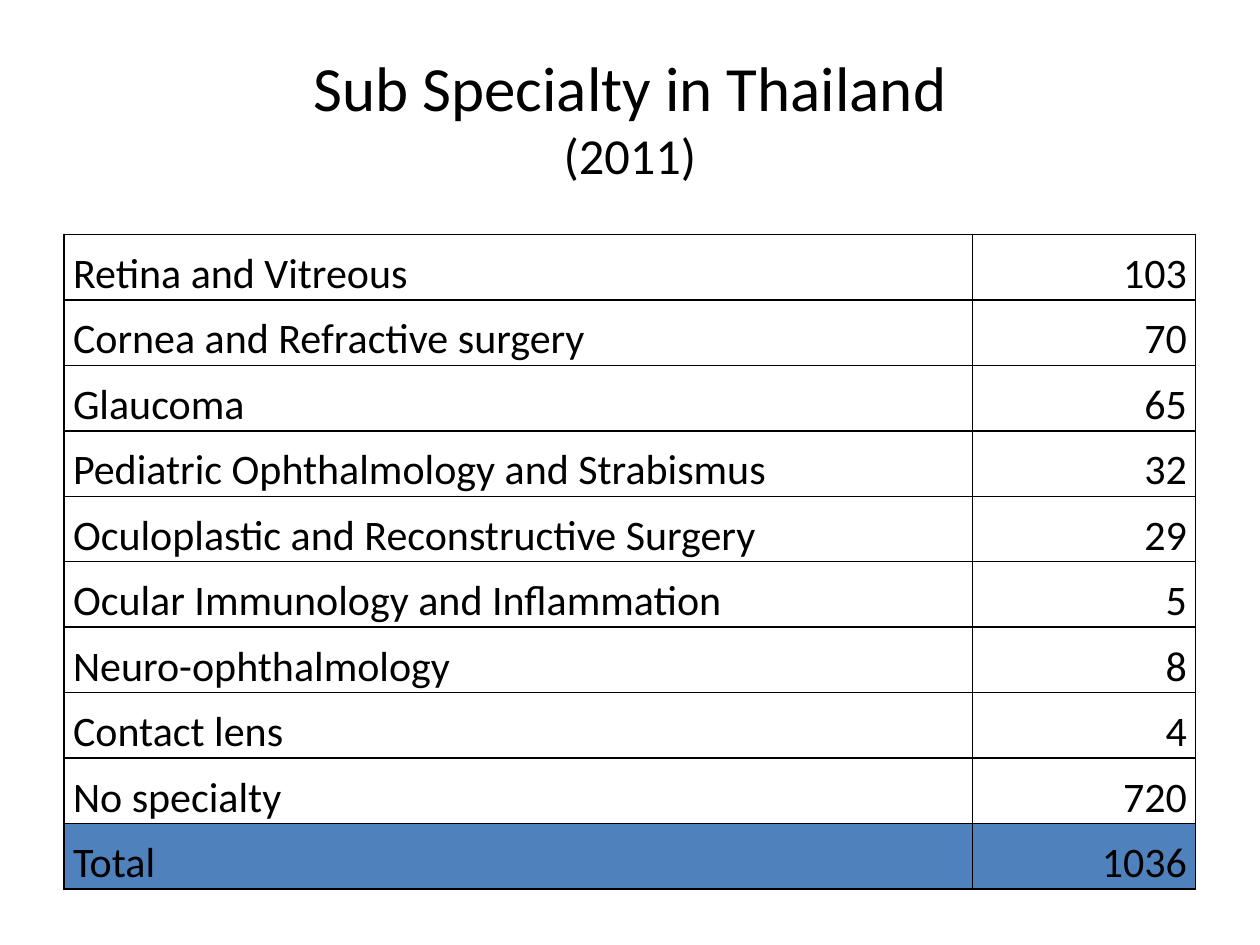
from lxml import etree
from pptx import Presentation
from pptx.dml.color import RGBColor
from pptx.enum.text import MSO_ANCHOR, PP_ALIGN
from pptx.oxml.ns import qn
from pptx.util import Inches, Pt

MIDDLE, BOTTOM = MSO_ANCHOR.MIDDLE, MSO_ANCHOR.BOTTOM
LEFT, CENTER, RIGHT = PP_ALIGN.LEFT, PP_ALIGN.CENTER, PP_ALIGN.RIGHT
BLACK = RGBColor(0x00, 0x00, 0x00)
BLUE = RGBColor(0x4F, 0x81, 0xBD)
FONT = "Calibri"

# Content
TITLE = [("Sub Specialty in Thailand", 36), ("(2011)", 28.8)]
ROWS = [
    ("Retina and Vitreous", 103),
    ("Cornea and Refractive surgery", 70),
    ("Glaucoma", 65),
    ("Pediatric Ophthalmology and Strabismus", 32),
    ("Oculoplastic and Reconstructive Surgery", 29),
    ("Ocular Immunology and Inflammation", 5),
    ("Neuro-ophthalmology", 8),
    ("Contact lens", 4),
    ("No specialty", 720),
    ("Total", 1036),
]
COLS = [(7.21, LEFT), (1.77, RIGHT)]
ROW_H = 0.52
CELL = {
    "vertical_anchor": BOTTOM,
    "margin_left": Inches(0.07),
    "margin_right": Inches(0.07),
    "margin_top": 0,
    "margin_bottom": 0,
}


def add_run(para, text, size):
    run = para.add_run()
    run.text = text
    run.font.name, run.font.size = FONT, Pt(size)
    run.font.color.rgb = BLACK


def add_edges(cell):
    props = cell._tc.get_or_add_tcPr()
    for side in ("a:lnL", "a:lnR", "a:lnT", "a:lnB"):
        line = etree.SubElement(props, qn(side), w=str(Pt(1)))
        fill = etree.SubElement(line, qn("a:solidFill"))
        etree.SubElement(fill, qn("a:srgbClr"), val=str(BLACK))


deck = Presentation()
deck.slide_width, deck.slide_height = Inches(10), Inches(7.5)
slide = deck.slides.add_slide(deck.slide_layouts[6])

# Title
box = slide.shapes.add_textbox(Inches(0.5), Inches(0.3), Inches(9), Inches(1.25))
frame = box.text_frame
frame.word_wrap, frame.vertical_anchor = True, MIDDLE
para = frame.paragraphs[0]
para.alignment = CENTER
for i, (text, size) in enumerate(TITLE):
    if i:
        para.add_line_break()
    add_run(para, text, size)

# Table
table = slide.shapes.add_table(
    len(ROWS), len(COLS), Inches(0.51), Inches(1.86),
    Inches(sum(width for width, _ in COLS)), Inches(ROW_H * len(ROWS)),
).table
table.first_row = table.horz_banding = False
for col, (width, _) in zip(table.columns, COLS):
    col.width = Inches(width)
for r, row in enumerate(ROWS):
    table.rows[r].height = Inches(ROW_H)
    for c, (value, (_, align)) in enumerate(zip(row, COLS)):
        cell = table.cell(r, c)
        for name, setting in CELL.items():
            setattr(cell, name, setting)
        para = cell.text_frame.paragraphs[0]
        para.alignment = align
        add_run(para, str(value), 24)
        add_edges(cell)
        if r == len(ROWS) - 1:
            cell.fill.solid()
            cell.fill.fore_color.rgb = BLUE
        else:
            cell.fill.background()

deck.save("out.pptx")
